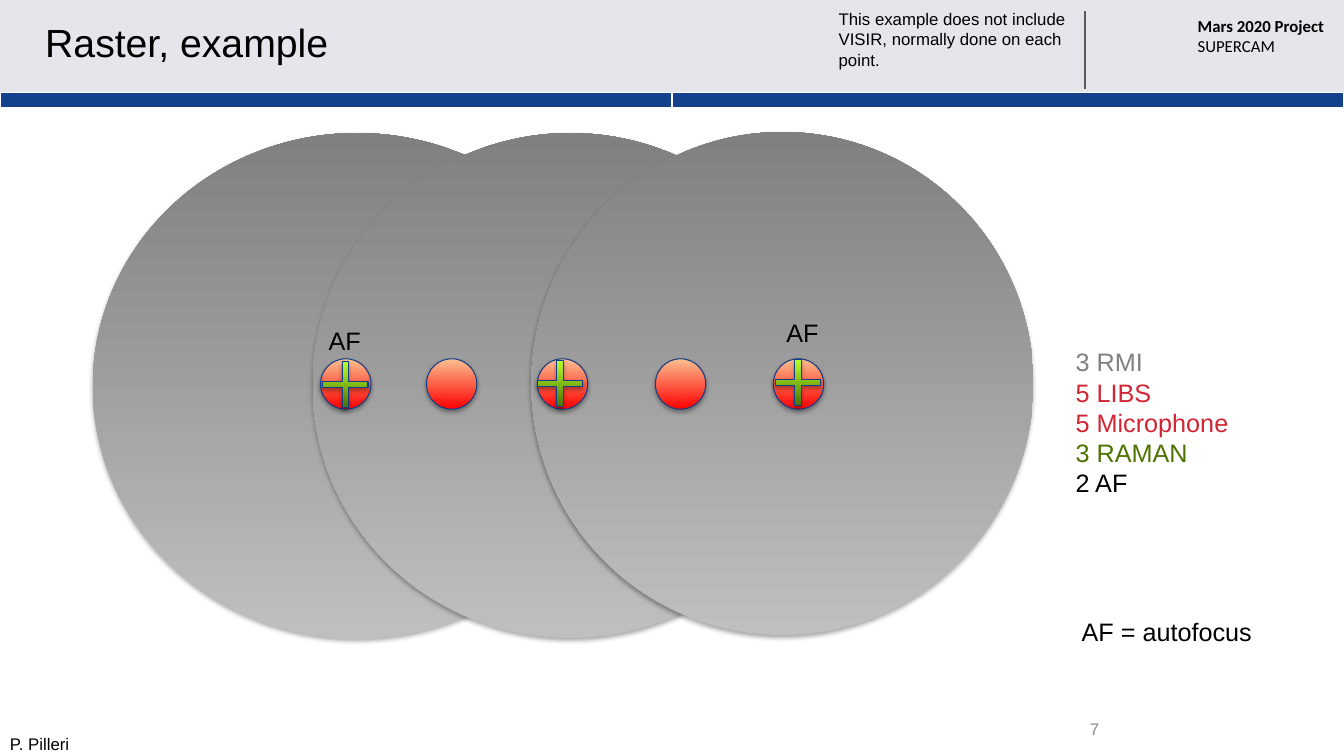
import pptx
import pptx.dml.color
import pptx.enum.shapes
import pptx.enum.text
import pptx.oxml
import pptx.oxml.ns
import pptx.util
from pptx.util import Inches

SHAPES = pptx.enum.shapes.MSO_SHAPE
ALIGN = pptx.enum.text.PP_ALIGN
ANCHOR = pptx.enum.text.MSO_ANCHOR

THEME = {
    "font": "Arial", "header_font": "Calibri",
    "title": 28, "body": 18, "small": 12,
    "black": "000000", "gray": "808080", "red": "D22533", "green": "4D7300",
    "page": "8C8C8C", "header": "E6E5EC", "band": "13418B",
    "rule": "595959", "outline": "103E8B",
    # gradients run from bottom to top
    "field": ("BFBFBF", "808080"),
    "shot": ("FF0000", "FAC090"),
    "raman": ("4D7300", "B8FF29"),
}

# left, top, width, height in inches
FIELDS = [(0.92, 1.32, 5.24, 5.02), (3.1, 1.32, 5.11, 5.01), (5.27, 1.31, 4.98, 4.99)]
SHOT_LEFTS = [3.18, 4.23, 5.33, 6.5, 7.67]
SHOT_TOP, SHOT_SIZE = 3.56, 0.5
RAMAN_CORNERS = [(3.2, 3.59), (7.69, 3.57), (5.33, 3.58)]
RAMAN_SIZE, RAMAN_NOTCH = 0.45, 0.432

# box, lines as (text, colour), type size, options
TEXTS = [
    ((0.35, 0.11, 10.28, 0.61), [("Raster, example", "black")], "title", {"anchor": ANCHOR.MIDDLE}),
    ((7.89, 7.03, 3.11, 0.4), [("7", "page")], "small",
     {"anchor": ANCHOR.MIDDLE, "align": ALIGN.RIGHT}),
    ((10.57, 3.39, 1.73, 1.62),
     [("3 RMI", "gray"), ("5 LIBS", "red"), ("5 Microphone", "red"),
      ("3 RAMAN", "green"), ("2 AF", "black")], "body", {"wrap": False}),
    ((3.16, 3.18, 0.52, 0.4), [("AF", "black")], "body", {"wrap": False}),
    ((7.7, 3.1, 0.52, 0.4), [("AF", "black")], "body", {}),
    ((10.63, 6.07, 1.91, 0.4), [("AF = autofocus", "black")], "body", {"wrap": False}),
    ((8.22, 0.04, 2.47, 0.71),
     [("This example does not include VISIR, normally done on each point.", "black")], "small", {}),
    ((0, 7.23, 0.8, 0.3), [("P. Pilleri", "black")], "small", {"wrap": False}),
]
PROJECT_BOX = (11.78, 0.11, 2.54, 0.5)
PROJECT_LINES = [("Mars 2020 Project", "black"), ("SUPERCAM", "black")]


def color(name):
    return pptx.dml.color.RGBColor.from_string(THEME.get(name, name))


def add_text(slide, box, lines, size, font="font", wrap=True, anchor=ANCHOR.TOP, align=ALIGN.LEFT):
    frame = slide.shapes.add_textbox(*map(Inches, box)).text_frame
    frame.word_wrap = wrap
    frame.vertical_anchor = anchor
    frame.text = "\n".join(text for text, _ in lines)
    for paragraph, (_, color_name) in zip(frame.paragraphs, lines):
        paragraph.alignment = align
        paragraph.font.name = THEME[font]
        paragraph.font.size = pptx.util.Pt(THEME[size])
        paragraph.font.color.rgb = color(color_name)
    return frame


def add_shadow(shape):
    shape.shadow.inherit = False
    effects = shape.element.spPr.find(pptx.oxml.ns.qn("a:effectLst"))
    effects.append(pptx.oxml.parse_xml(
        f'<a:outerShdw {pptx.oxml.ns.nsdecls("a")} blurRad="40000" dist="23000" dir="5400000" '
        'rotWithShape="0"><a:srgbClr val="000000"><a:alpha val="35000"/></a:srgbClr></a:outerShdw>'))


def add_marker(slide, kind, box, gradient, outlined=True):
    """Add a shadowed shape with a vertical gradient."""
    shape = slide.shapes.add_shape(kind, *map(Inches, box))
    shape.fill.gradient()
    shape.fill.gradient_angle = 90
    for stop, stop_color in zip(shape.fill.gradient_stops, THEME[gradient]):
        stop.color.rgb = color(stop_color)
    if outlined:
        shape.line.color.rgb = color("outline")
        shape.line.width = pptx.util.Pt(0.75)
    else:
        shape.line.fill.background()
    add_shadow(shape)
    return shape


def add_header(slide, width):
    header = slide.shapes.add_shape(SHAPES.RECTANGLE, 0, 0, width, Inches(0.93))
    header.shadow.inherit = False
    header.fill.solid()
    header.fill.fore_color.rgb = color("header")
    header.line.fill.background()

    band = slide.shapes.add_table(1, 2, 0, Inches(0.92), width, Inches(0.15)).table
    for cell in band.iter_cells():
        cell.fill.solid()
        cell.fill.fore_color.rgb = color("band")
        cell.margin_top = cell.margin_bottom = 0
        # an empty cell takes its height from the end-of-paragraph size
        cell.text_frame.paragraphs[0]._p.get_or_add_endParaRPr().set("sz", "100")

    rule = slide.shapes.add_connector(
        pptx.enum.shapes.MSO_CONNECTOR.STRAIGHT,
        Inches(10.76), Inches(0.11), Inches(10.76), Inches(0.88))
    rule.line.color.rgb = color("rule")
    rule.line.width = pptx.util.Pt(1)
    rule.element.spPr.append(pptx.oxml.parse_xml(f'<a:effectLst {pptx.oxml.ns.nsdecls("a")}/>'))

    project = add_text(slide, PROJECT_BOX, PROJECT_LINES, "small", font="header_font")
    project.paragraphs[0].font.bold = True


def main():
    presentation = pptx.Presentation()
    presentation.slide_width = Inches(13.33)
    presentation.slide_height = Inches(7.5)
    slide = presentation.slides.add_slide(presentation.slide_layouts[6])

    add_header(slide, presentation.slide_width)
    for box in FIELDS:
        add_marker(slide, SHAPES.OVAL, box, "field", outlined=False)
    for left in SHOT_LEFTS:
        add_marker(slide, SHAPES.OVAL, (left, SHOT_TOP, SHOT_SIZE, SHOT_SIZE), "shot")
    for left, top in RAMAN_CORNERS:
        cross = add_marker(slide, SHAPES.CROSS, (left, top, RAMAN_SIZE, RAMAN_SIZE), "raman")
        cross.adjustments[0] = RAMAN_NOTCH
    for box, lines, size, options in TEXTS:
        add_text(slide, box, lines, size, **options)

    presentation.save("out.pptx")


if __name__ == "__main__":
    main()
